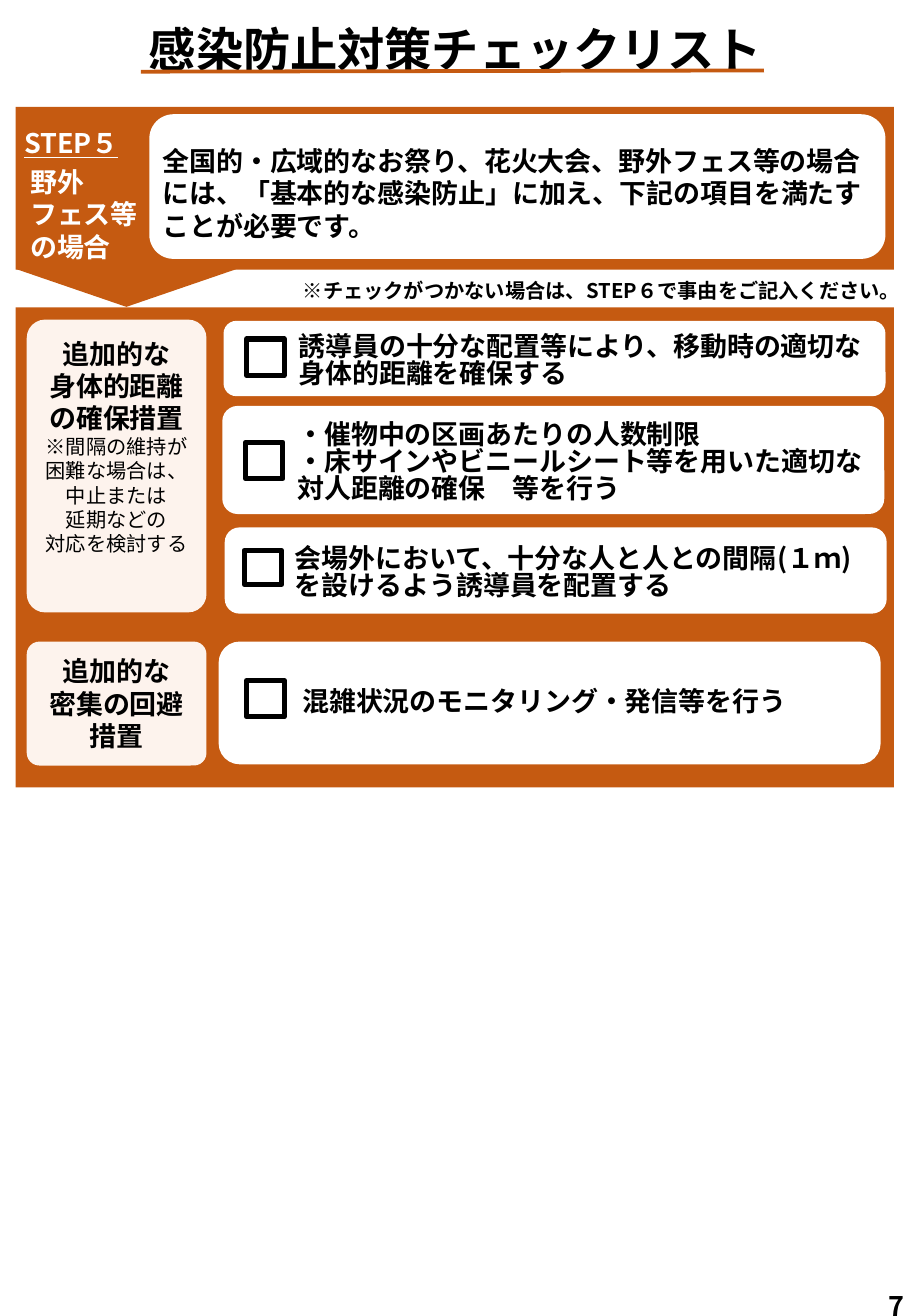
from dataclasses import dataclass

from lxml.etree import SubElement
from pptx import Presentation
from pptx.dml.color import RGBColor
from pptx.enum.shapes import MSO_CONNECTOR, MSO_SHAPE
from pptx.enum.text import MSO_ANCHOR, MSO_AUTO_SIZE, PP_ALIGN
from pptx.oxml.ns import qn
from pptx.util import Pt

PX = 9144
FONT = "Noto Sans CJK JP"
COLORS = {"orange": "C55A11", "cream": "FDF3ED", "white": "FFFFFF", "black": "000000"}


@dataclass
class Box:
    x: int
    y: int
    w: int
    h: int

    def emu(self) -> tuple[int, ...]:
        return tuple(v * PX for v in (self.x, self.y, self.w, self.h))


@dataclass
class Line:
    text: str
    size: int = 16
    bold: bool = True
    underline: bool = False
    indent: int = 0
    before: int = 0


@dataclass
class Category:
    box: Box
    lines: list[Line]
    bottom_inset: int = 4


@dataclass
class CheckItem:
    card: Box
    check: Box
    label: Box
    lines: list[Line]
    radius: float = 0.171


CATEGORIES = [
    Category(Box(22, 263, 148, 241), [
        Line("追加的な"),
        Line("身体的距離の確保措置"),
        Line("※間隔の維持が困難な場合は、中止または", 12, False),
        Line("延期などの", 12, False),
        Line("対応を検討する", 12, False),
    ], 36),
    Category(Box(22, 528, 148, 102), [Line("追加的な"), Line("密集の回避"), Line("措置")]),
]
ITEMS = [
    CheckItem(Box(184, 264, 545, 62), Box(203, 279, 31, 30), Box(236, 271, 514, 56), [
        Line("誘導員の十分な配置等により、移動時の適切な"),
        Line("身体的距離を確保する"),
    ]),
    CheckItem(Box(183, 334, 545, 89), Box(202, 364, 31, 30), Box(235, 343, 514, 77), [
        Line("・催物中の区画あたりの人数制限"),
        Line("・床サインやビニールシート等を用いた適切な"),
        Line("対人距離の確保　等を行う"),
    ], 0.142),
    CheckItem(Box(185, 434, 545, 71), Box(201, 453, 31, 28), Box(233, 445, 514, 55), [
        Line("会場外において、十分な人と人との間隔(１ｍ)"),
        Line("を設けるよう誘導員を配置する"),
    ]),
    CheckItem(Box(180, 528, 545, 101), Box(203, 560, 31, 30), Box(239, 563, 514, 34), [
        Line("混雑状況のモニタリング・発信等を行う"),
    ]),
]


def rgb(name: str) -> RGBColor:
    return RGBColor.from_string(COLORS[name])


def write(tf, lines: list[Line], color: str = "black", align=PP_ALIGN.LEFT, spacing=None) -> None:
    tf.word_wrap = True
    tf.auto_size = MSO_AUTO_SIZE.NONE
    for i, line in enumerate(lines):
        p = tf.add_paragraph() if i else tf.paragraphs[0]
        p.text = line.text
        p.alignment = align
        p.line_spacing = spacing
        p.space_before = Pt(line.before)
        font = p.font
        font.size = Pt(line.size)
        font.bold = line.bold
        font.underline = line.underline
        font.color.rgb = rgb(color)
        font.name = FONT
        pPr = p._p.get_or_add_pPr()
        pPr.set("marL", str(line.indent * PX))
        pPr.set("indent", "0")
        SubElement(pPr.find(qn("a:defRPr")), qn("a:ea"), typeface=FONT)


def add_text(s, box: Box, lines: list[Line], color: str = "black",
             align=PP_ALIGN.LEFT, spacing=None) -> None:
    write(s.shapes.add_textbox(*box.emu()).text_frame, lines, color, align, spacing)


def add_panel(s, kind, box: Box, color: str, radius: float | None = None):
    sp = s.shapes.add_shape(kind, *box.emu())
    sp.shadow.inherit = False
    sp.fill.solid()
    sp.fill.fore_color.rgb = rgb(color)
    sp.line.fill.background()
    if radius is not None:
        sp.adjustments[0] = radius
    return sp


def add_title(s) -> None:
    title = s.shapes.title
    title.left, title.top, title.width, title.height = Box(48, 12, 654, 57).emu()
    title.text_frame.vertical_anchor = MSO_ANCHOR.TOP
    write(title.text_frame, [Line("感染防止対策チェックリスト", 28)], align=PP_ALIGN.CENTER)
    rule = s.shapes.add_connector(MSO_CONNECTOR.STRAIGHT, 116 * PX, 59 * PX, 629 * PX, 58 * PX)
    rule.line.color.rgb = rgb("orange")
    rule.line.width = Pt(2.25)
    SubElement(rule._element.spPr, qn("a:effectLst"))


def add_step(s) -> None:
    add_panel(s, MSO_SHAPE.PENTAGON, Box(73, 131, 62, 181), "orange").rotation = 90
    add_panel(s, MSO_SHAPE.RECTANGLE, Box(13, 88, 723, 134), "orange")
    add_panel(s, MSO_SHAPE.ROUNDED_RECTANGLE, Box(123, 94, 606, 119), "white")
    add_text(s, Box(10, 99, 119, 123), [
        Line("STEP５", underline=True),
        Line("野外", indent=5, before=4),
        Line("フェス等", indent=5),
        Line("の場合", indent=5),
    ], "white")
    add_text(s, Box(124, 114, 614, 91), [Line(
        "全国的・広域的なお祭り、花火大会、野外フェス等の場合には、"
        "「基本的な感染防止」に加え、下記の項目を満たすことが必要です。")])
    add_text(s, Box(212, 222, 539, 33),
             [Line("※チェックがつかない場合は、STEP６で事由をご記入ください。", 12)],
             align=PP_ALIGN.RIGHT, spacing=Pt(16))


def add_category(s, category: Category) -> None:
    sp = add_panel(s, MSO_SHAPE.ROUNDED_RECTANGLE, category.box, "cream", 0.102)
    tf = sp.text_frame
    tf.vertical_anchor = MSO_ANCHOR.MIDDLE
    tf.margin_left = tf.margin_right = 7 * PX
    tf.margin_top = 4 * PX
    tf.margin_bottom = category.bottom_inset * PX
    write(tf, category.lines, align=PP_ALIGN.CENTER)


def add_item(s, item: CheckItem) -> None:
    add_panel(s, MSO_SHAPE.ROUNDED_RECTANGLE, item.card, "white", item.radius)
    check = add_panel(s, MSO_SHAPE.RECTANGLE, item.check, "white")
    check.fill.background()
    check.line.color.rgb = rgb("black")
    check.line.width = Pt(3)
    add_text(s, item.label, item.lines, spacing=Pt(16))


def main() -> None:
    prs = Presentation()
    prs.slide_width, prs.slide_height = 750 * PX, 1083 * PX
    s = prs.slides.add_slide(prs.slide_layouts[5])
    add_title(s)
    add_step(s)
    add_panel(s, MSO_SHAPE.RECTANGLE, Box(13, 253, 723, 395), "orange")
    for category in CATEGORIES:
        add_category(s, category)
    for item in ITEMS:
        add_item(s, item)
    add_text(s, Box(722, 1056, 59, 37), [Line("7")])
    prs.save("out.pptx")


if __name__ == "__main__":
    main()
